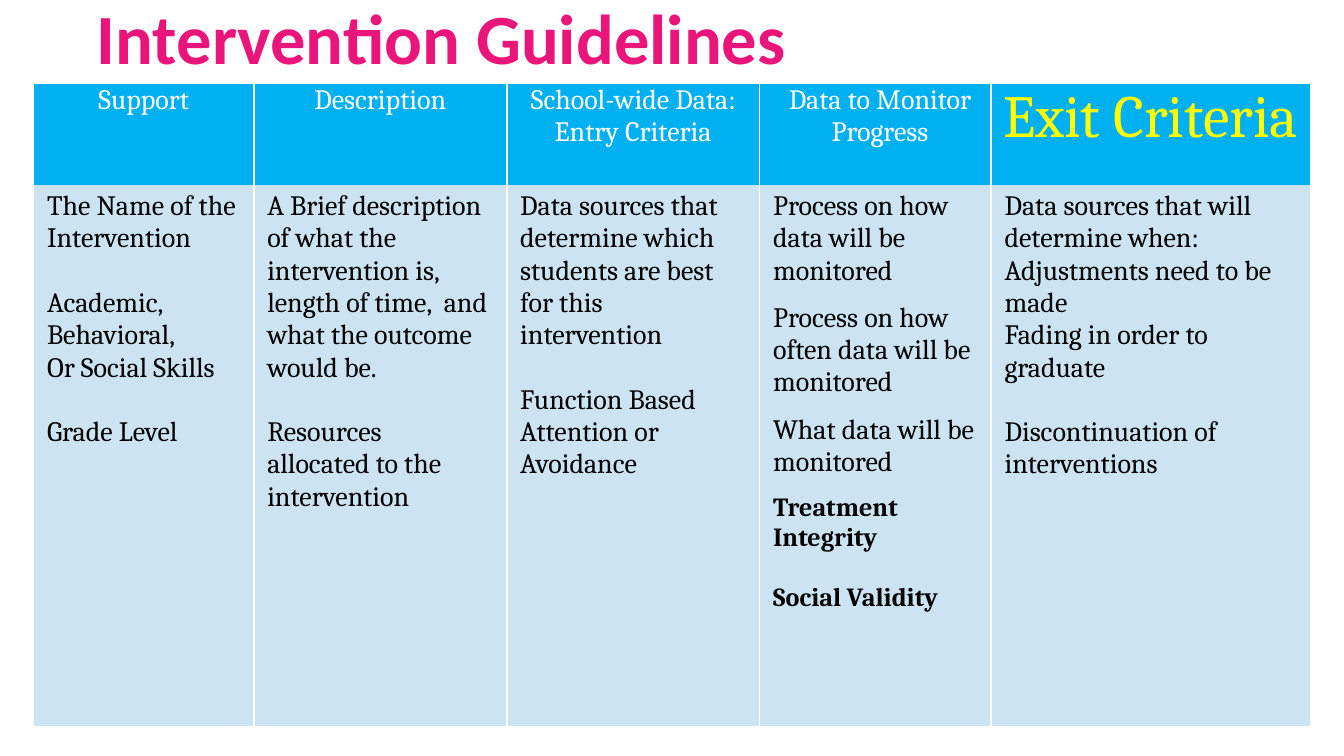
import pptx
import pptx.util
import pptx.dml.color
import pptx.enum.text
import pptx.oxml

Pt = pptx.util.Pt
ALIGN = pptx.enum.text.PP_ALIGN
ANCHOR = pptx.enum.text.MSO_ANCHOR
DRAWING = "http://schemas.openxmlformats.org/drawingml/2006/main"

COLUMN_WIDTHS = [118, 135.5, 135.5, 124, 171]
ROW_HEIGHTS = [54, 290]
HEADER_FILL, BODY_FILL = "00B0F0", "CCE3F2"
HEADER_INSETS = {"margin_left": Pt(5), "margin_right": Pt(5), "margin_top": 0, "margin_bottom": 0}
BODY_INSETS = {"margin_left": Pt(7.2), "margin_right": Pt(7.2), "margin_top": Pt(3), "margin_bottom": Pt(3)}
TITLE_INSETS = {"margin_left": Pt(4), "margin_right": Pt(4), "margin_top": 0, "margin_bottom": Pt(1.7)}

TITLE_FONT = {"name": "Calibri", "size": Pt(37.8), "bold": True}
TEXT_FONT = {"name": "Cambria", "size": Pt(15), "bold": False}
EXIT_FONT = {**TEXT_FONT, "size": Pt(32)}
STRONG_FONT = {**TEXT_FONT, "size": Pt(14), "bold": True}

HEADERS = [
    ("Support", TEXT_FONT, "FFFFFF", 0),
    ("Description", TEXT_FONT, "FFFFFF", 0),
    ("School-wide Data: Entry Criteria", TEXT_FONT, "FFFFFF", 0),
    ("Data to Monitor Progress", TEXT_FONT, "FFFFFF", 5),
    ("Exit Criteria", EXIT_FONT, "FFFF00", 0),
]

LINE, STRONG_LINE, HALF = 17.3, 16, 8
BODY = [
    [("The Name of the Intervention", 0), ("Academic,", LINE), ("Behavioral,", 0),
     ("Or Social Skills", 0), ("Grade Level", LINE)],
    [("A Brief description of what the intervention is, length of time,  and what the outcome would be.", 0),
     ("Resources", LINE), ("allocated to the intervention", 0)],
    [("Data sources that determine which students are best for this intervention", 0),
     ("Function Based", LINE), ("Attention or Avoidance", 0)],
    [("Process on how data will be monitored", 0),
     ("Process on how often data will be monitored", HALF),
     ("What data will be monitored", HALF),
     ("Treatment Integrity", HALF, STRONG_FONT),
     ("Social Validity", STRONG_LINE, STRONG_FONT)],
    [("Data sources that will determine when:", 0), ("Adjustments need to be made", 0),
     ("Fading in order to graduate", 0), ("Discontinuation of interventions", LINE)],
]


def color(value):
    return pptx.dml.color.RGBColor.from_string(value)


def set_attributes(target, values):
    for name, value in values.items():
        setattr(target, name, value)


def write_paragraph(para, text, font, text_color, align=ALIGN.LEFT, gap=0):
    set_attributes(para, {"alignment": align, "space_before": Pt(gap)})
    span = para.add_run()
    span.text = text
    set_attributes(span.font, font)
    span.font.color.rgb = color(text_color)


def set_borders(cell):
    white = '<a:solidFill><a:srgbClr val="FFFFFF"/></a:solidFill>'
    sides = {"lnL": white, "lnR": white, "lnT": "<a:noFill/>", "lnB": "<a:noFill/>"}
    properties = cell._tc.get_or_add_tcPr()
    for index, (side, paint) in enumerate(sides.items()):
        border = f'<a:{side} xmlns:a="{DRAWING}" w="{Pt(1)}">{paint}</a:{side}>'
        properties.insert(index, pptx.oxml.parse_xml(border))


def style_cell(cell, fill, insets):
    cell.fill.solid()
    cell.fill.fore_color.rgb = color(fill)
    set_attributes(cell, {**insets, "vertical_anchor": ANCHOR.TOP})
    set_borders(cell)


def fill_header(cell, text, font, text_color, indent):
    style_cell(cell, HEADER_FILL, HEADER_INSETS)
    para = cell.text_frame.paragraphs[0]
    write_paragraph(para, text, font, text_color, ALIGN.CENTER)
    if indent:
        para._p.get_or_add_pPr().set("marL", str(Pt(indent)))


def fill_body(cell, lines):
    style_cell(cell, BODY_FILL, BODY_INSETS)
    frame = cell.text_frame
    for index, (text, gap, *fonts) in enumerate(lines):
        para = frame.add_paragraph() if index else frame.paragraphs[0]
        write_paragraph(para, text, fonts[0] if fonts else TEXT_FONT, "000000", gap=gap)


def add_guidelines_table(page):
    frame = page.shapes.add_table(len(ROW_HEIGHTS), len(COLUMN_WIDTHS), Pt(18), Pt(45),
                                  Pt(sum(COLUMN_WIDTHS)), Pt(sum(ROW_HEIGHTS)))
    table = frame.table
    for column, width in zip(table.columns, COLUMN_WIDTHS):
        column.width = Pt(width)
    for row, height in zip(table.rows, ROW_HEIGHTS):
        row.height = Pt(height)
    for index, (header, lines) in enumerate(zip(HEADERS, BODY)):
        fill_header(table.cell(0, index), *header)
        fill_body(table.cell(1, index), lines)


def add_title(page, text):
    box = page.shapes.add_textbox(Pt(48), Pt(29), Pt(648), Pt(15))
    set_attributes(box.text_frame, {**TITLE_INSETS, "word_wrap": True, "vertical_anchor": ANCHOR.BOTTOM})
    write_paragraph(box.text_frame.paragraphs[0], text, TITLE_FONT, "EA157A")


def main():
    deck = pptx.Presentation()
    set_attributes(deck, {"slide_width": Pt(720), "slide_height": Pt(405)})
    page = deck.slides.add_slide(deck.slide_layouts[6])
    add_guidelines_table(page)
    add_title(page, "Intervention Guidelines")
    deck.save("out.pptx")


if __name__ == "__main__":
    main()
